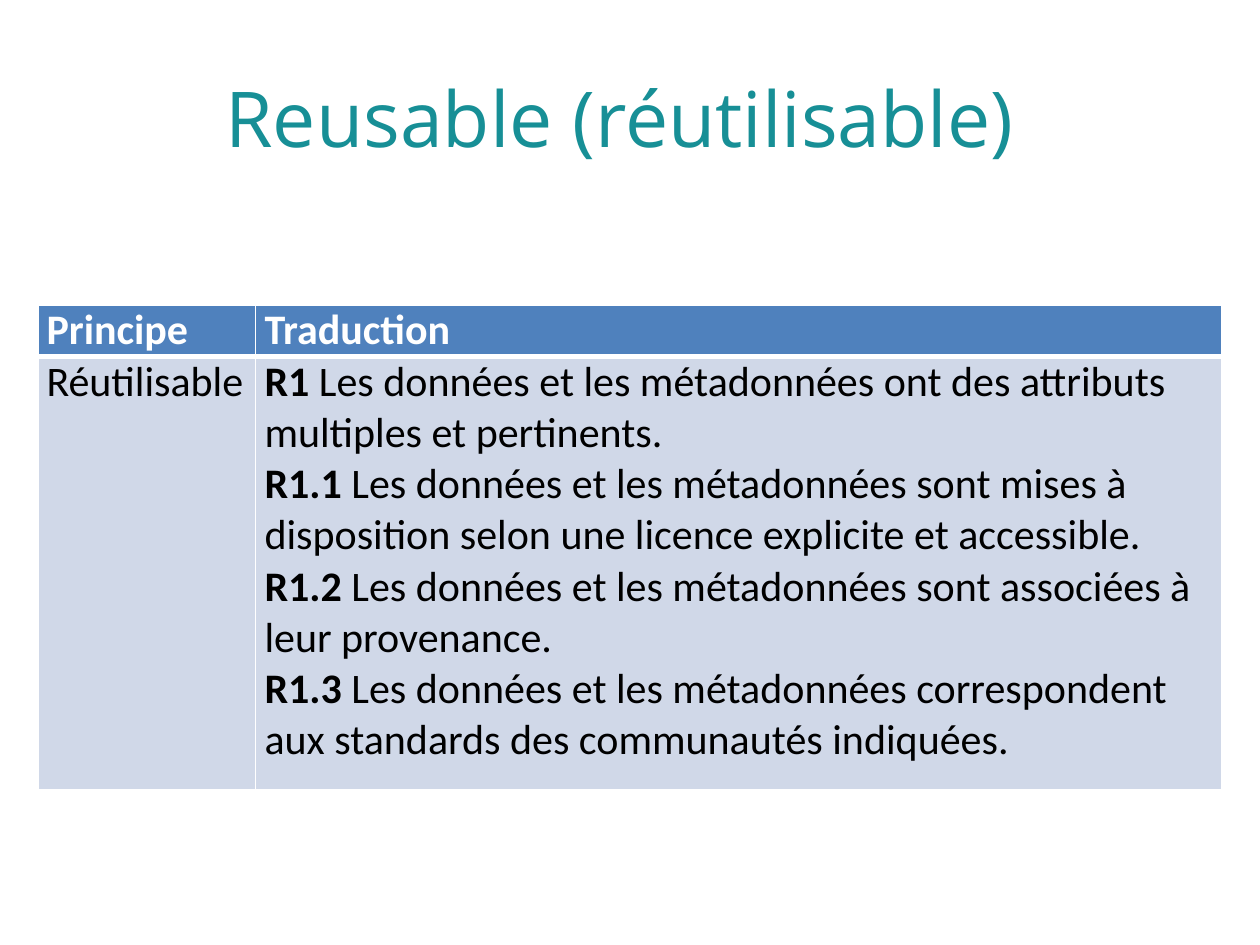
from dataclasses import dataclass

from lxml.etree import SubElement
from pptx import Presentation
from pptx.dml.color import RGBColor
from pptx.enum.text import MSO_ANCHOR, PP_ALIGN
from pptx.oxml.ns import qn
from pptx.slide import Slide
from pptx.util import Inches, Pt

WIDTH, HEIGHT = Inches(10), Inches(7.5)
TEAL = RGBColor(0x17, 0x8F, 0x96)
BLUE = RGBColor(0x4F, 0x81, 0xBD)
PALE_BLUE = RGBColor(0xD0, 0xD8, 0xE8)
WHITE = RGBColor(0xFF, 0xFF, 0xFF)
BLACK = RGBColor(0x00, 0x00, 0x00)

HEADINGS = ["Principe", "Traduction"]
PRINCIPLE = "Réutilisable"
RULES = [
    ("R1", " Les données et les métadonnées ont des attributs multiples et pertinents."),
    ("R1.1", " Les données et les métadonnées sont mises à disposition selon une licence explicite et accessible."),
    ("R1.2", " Les données et les métadonnées sont associées à leur provenance."),
    ("R1.3", " Les données et les métadonnées correspondent aux standards des communautés indiquées."),
]


@dataclass
class SlideBuilder:
    page: Slide
    title_font: str = "Open Sans"
    body_font: str = "Calibri"
    title_size: int = 44
    body_size: int = 24

    def place(self, left, top, width, height):
        return [round(WIDTH * left), round(HEIGHT * top), round(WIDTH * width), round(HEIGHT * height)]

    def style(self, span, font, size, color, bold=False):
        span.font.name = font
        span.font.size = Pt(size)
        span.font.bold = bold
        span.font.color.rgb = color

    def title(self, text, area):
        box = self.page.shapes.title
        box.left, box.top, box.width, box.height = self.place(*area)
        frame = box.text_frame
        frame.text = text
        frame.vertical_anchor = MSO_ANCHOR.MIDDLE
        para = frame.paragraphs[0]
        para.alignment = PP_ALIGN.CENTER
        self.style(para.runs[0], self.title_font, self.title_size, TEAL)

    def table(self, area, column_shares, row_shares):
        place = self.place(*area)
        grid = self.page.shapes.add_table(len(row_shares), len(column_shares), *place).table
        for column, share in zip(grid.columns, column_shares):
            column.width = round(place[2] * share)
        for row, share in zip(grid.rows, row_shares):
            row.height = round(place[3] * share)
        return grid

    def border(self, cell, bottom):
        properties = cell._tc.get_or_add_tcPr()
        for side, points in (("L", 1), ("R", 1), ("T", 1), ("B", bottom)):
            line = SubElement(properties, qn(f"a:ln{side}"), w=str(Pt(points)))
            fill = SubElement(line, qn("a:solidFill"))
            SubElement(fill, qn("a:srgbClr"), val=str(WHITE))

    def cell(self, cell, paragraphs, fill, color, bottom=1):
        cell.margin_left = cell.margin_right = Inches(0.07)
        cell.margin_top = cell.margin_bottom = 0
        self.border(cell, bottom)
        cell.fill.solid()
        cell.fill.fore_color.rgb = fill
        frame = cell.text_frame
        frame.text = "\n".join("" for _ in paragraphs)
        for para, spans in zip(frame.paragraphs, paragraphs):
            for text, bold in spans:
                span = para.add_run()
                span.text = text
                self.style(span, self.body_font, self.body_size, color, bold)


def main():
    deck = Presentation()
    deck.slide_width, deck.slide_height = WIDTH, HEIGHT
    builder = SlideBuilder(deck.slides.add_slide(deck.slide_layouts[5]))
    builder.title("Reusable (réutilisable) ", (0.05, 0.04, 0.9, 1 / 6))

    grid = builder.table((0.03, 2.42 / 7.5, 0.94, 3.84 / 7.5), (0.184, 0.816), (0.104, 0.896))
    for column, heading in enumerate(HEADINGS):
        builder.cell(grid.cell(0, column), [[(heading, True)]], BLUE, WHITE, bottom=3)
    builder.cell(grid.cell(1, 0), [[(PRINCIPLE, False)]], PALE_BLUE, BLACK)
    rules = [[(code, True), (text, False)] for code, text in RULES]
    builder.cell(grid.cell(1, 1), rules, PALE_BLUE, BLACK)
    deck.save("out.pptx")


if __name__ == "__main__":
    main()
